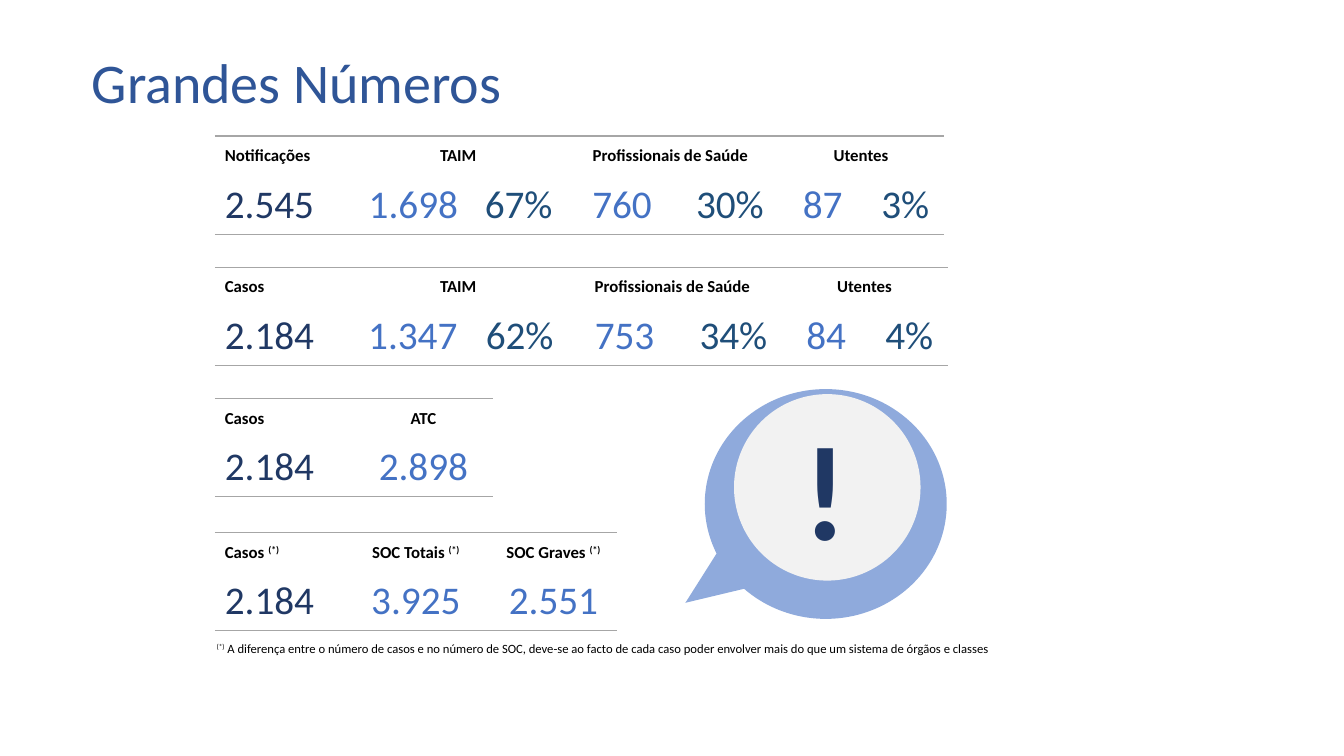
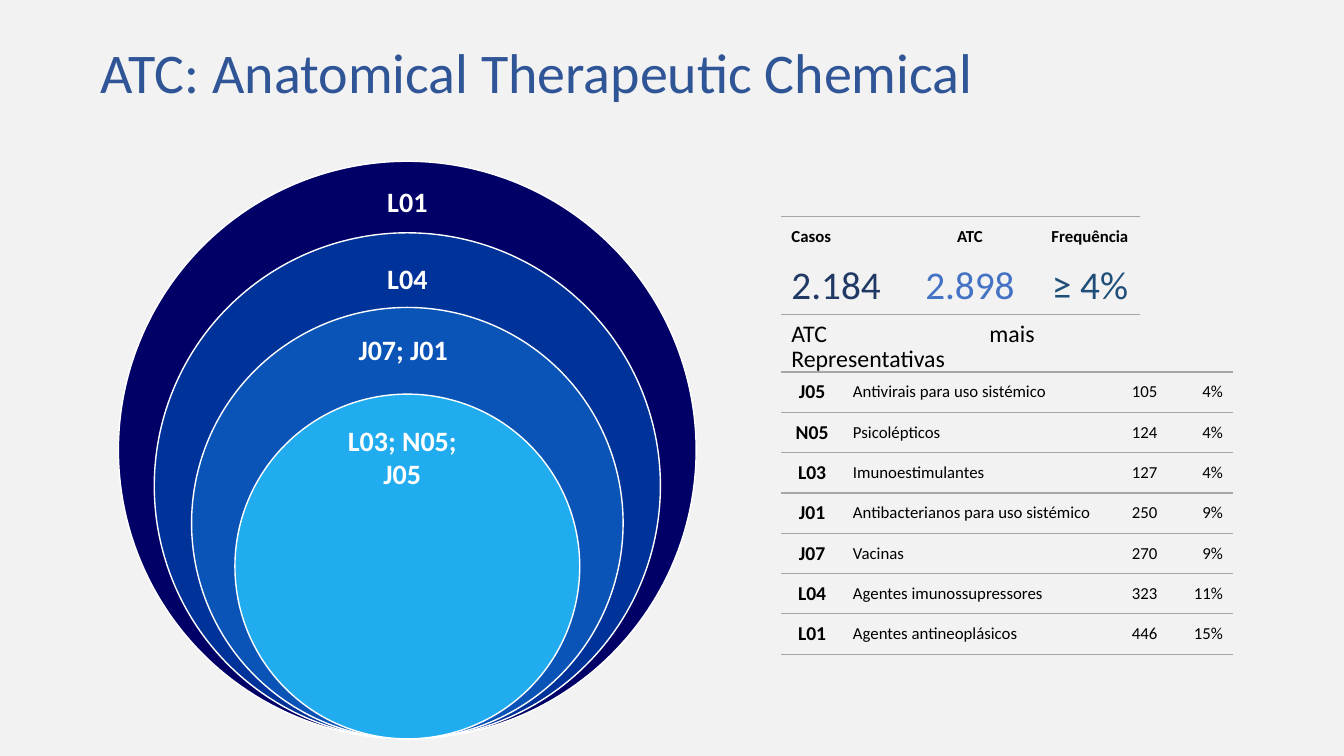
from dataclasses import dataclass

from lxml.etree import SubElement
from pptx import Presentation
from pptx.dml.color import RGBColor
from pptx.enum.shapes import MSO_SHAPE as Shape
from pptx.enum.text import MSO_ANCHOR as Anchor, MSO_AUTO_SIZE as AutoSize, PP_ALIGN as Align
from pptx.oxml import parse_xml
from pptx.oxml.ns import nsdecls, qn
from pptx.util import Inches, Pt


@dataclass(frozen=True)
class Theme:
    font: str = "Calibri"
    title: str = "2F5597"
    text: str = "000000"
    total: str = "203864"
    count: str = "4472C4"
    share: str = "1F4E79"
    rule: str = "A6A6A6"
    white: str = "FFFFFF"
    pale: str = "F2F2F2"
    bubble: str = "8FAADC"
    rings: tuple = ("000066", "003399", "0A54B7", "20ACEE")
    title_size: int = 40
    figure_size: int = 28
    ring_size: int = 20
    caption_size: int = 17
    code_size: int = 14
    table_size: int = 12
    note_size: int = 9
    symbol_size: int = 96


THEME = Theme()
MARK = "(*)"
PLAIN_TABLE = "{2D5ABB26-0587-4C30-8999-92F81FD0307C}"
SIDES = {"top": "a:lnT", "bottom": "a:lnB"}


def rgb(color):
    return RGBColor.from_string(color)


def write(para, text, size, color=THEME.text, bold=False, align=Align.LEFT):
    para.alignment = align
    for part in text.partition(MARK):
        if not part:
            continue
        span = para.add_run()
        span.text = part
        span.font.name = THEME.font
        span.font.size = Pt(size)
        span.font.bold = bold
        span.font.color.rgb = rgb(color)
        if part == MARK:
            span._r.get_or_add_rPr().set("baseline", "30000")


def add_page(deck, title, left, top, background):
    page = deck.slides.add_slide(deck.slide_layouts[5])
    page.background.fill.solid()
    page.background.fill.fore_color.rgb = rgb(background)
    box = page.shapes.title
    box.left, box.top, box.width, box.height = (Inches(n) for n in (left, top, 11, 0.69))
    frame = box.text_frame
    frame.auto_size = AutoSize.NONE
    frame.vertical_anchor = Anchor.TOP
    frame.margin_left = frame.margin_right = frame.margin_top = frame.margin_bottom = 0
    frame.paragraphs[0].line_spacing = 0.9
    write(frame.paragraphs[0], title, THEME.title_size, THEME.title)
    return page


def add_text(page, area, lines, size, color=THEME.text, bold=False,
             align=Align.LEFT, anchor=Anchor.TOP, spacing=None):
    frame = page.shapes.add_textbox(*(Inches(n) for n in area)).text_frame
    frame.word_wrap = True
    frame.vertical_anchor = anchor
    for index, line in enumerate(lines):
        para = frame.add_paragraph() if index else frame.paragraphs[0]
        para.line_spacing = spacing
        write(para, line, size, color, bold, align)


def add_figure(page, kind, area, fill, outline=None):
    figure = page.shapes.add_shape(kind, *(Inches(n) for n in area))
    figure.shadow.inherit = False
    figure.fill.solid()
    figure.fill.fore_color.rgb = rgb(fill)
    if outline:
        figure.line.color.rgb = rgb(outline)
        figure.line.width = Pt(1)
    else:
        figure.line.fill.background()
    return figure


def rule_cell(cell, sides):
    properties = cell._tc.get_or_add_tcPr()
    for position, side in enumerate(sides):
        line = parse_xml(f'<{SIDES[side]} {nsdecls("a")} w="{Pt(1)}"/>')
        solid = SubElement(line, qn("a:solidFill"))
        SubElement(solid, qn("a:srgbClr"), val=THEME.rule)
        properties.insert(position, line)


def add_plain_table(page, left, top, widths, heights, row_sides):
    frame = page.shapes.add_table(len(heights), len(widths), Inches(left), Inches(top),
                                  Inches(sum(widths)), Inches(sum(heights)))
    table = frame.table
    table.first_row = table.horz_banding = False
    table._tbl.tblPr.find(qn("a:tableStyleId")).text = PLAIN_TABLE
    for column, width in zip(table.columns, widths):
        column.width = Inches(width)
    for row, height, sides in zip(table.rows, heights, row_sides):
        row.height = Inches(height)
        for cell in row.cells:
            cell.fill.background()
            rule_cell(cell, sides)
    return table


def add_summary(page, left, top, widths, headers, values, right_columns=()):
    table = add_plain_table(page, left, top, widths, (0.4, 0.57), (("top",), ("bottom",)))
    column = 0
    for text, columns in headers:
        cell = table.cell(0, column)
        if columns > 1:
            cell.merge(table.cell(0, column + columns - 1))
        cell.vertical_anchor = Anchor.MIDDLE
        write(cell.text_frame.paragraphs[0], text, THEME.table_size, bold=True,
              align=Align.CENTER if column else Align.LEFT)
        column += columns
    for column, value in enumerate(values):
        align, color = Align.CENTER, THEME.count
        if column == 0:
            align, color = Align.LEFT, THEME.total
        elif value.endswith("%"):
            color = THEME.share
        if column in right_columns:
            align = Align.RIGHT
        write(table.cell(1, column).text_frame.paragraphs[0], value,
              THEME.figure_size, color, align=align)


def add_code_list(page, left, top, widths, records):
    table = add_plain_table(page, left, top, widths, [0.4] * len(records),
                            [("top", "bottom")] * len(records))
    aligns = (Align.CENTER, Align.LEFT, Align.RIGHT, Align.RIGHT)
    for row, record in enumerate(records):
        for column, (text, align) in enumerate(zip(record, aligns)):
            cell = table.cell(row, column)
            cell.vertical_anchor = Anchor.MIDDLE
            is_code = column == 0
            write(cell.text_frame.paragraphs[0], text,
                  THEME.code_size if is_code else THEME.table_size, bold=is_code, align=align)


def add_nested_circles(page, center, bottom, diameters):
    for diameter, color in zip(diameters, THEME.rings):
        area = (center - diameter / 2, bottom - diameter, diameter, diameter)
        add_figure(page, Shape.OVAL, area, color, THEME.white)


def add_alert_bubble(page):
    bubble = add_figure(page, Shape.OVAL_CALLOUT, (6.99, 3.86, 2.4, 2.28), THEME.bubble)
    bubble.adjustments[0], bubble.adjustments[1] = -0.58, 0.43
    add_figure(page, Shape.OVAL, (7.28, 3.91, 1.85, 1.85), THEME.pale)
    add_text(page, (7.73, 3.98, 0.92, 1.72), ["!"], THEME.symbol_size, THEME.total,
             bold=True, align=Align.CENTER)


def build_numbers(deck):
    page = add_page(deck, "Grandes Números", 0.91, 0.55, THEME.white)
    left = 2.13
    sources = [("TAIM", 2), ("Profissionais de Saúde", 2), ("Utentes", 2)]
    add_summary(page, left, 1.35, (1.38, 1.18, 0.89, 1.18, 0.96, 0.88, 0.76),
                [("Notificações", 1)] + sources,
                ("2.545", "1.698", "67%", "760", "30%", "87", "3%"), (2,))
    add_summary(page, left, 2.65, (1.37, 1.19, 0.9, 1.21, 0.95, 0.89, 0.76),
                [("Casos", 1)] + sources,
                ("2.184", "1.347", "62%", "753", "34%", "84", "4%"), (2,))
    add_summary(page, left, 3.95, (1.38, 1.38), [("Casos", 1), ("ATC", 1)],
                ("2.184", "2.898"))
    add_summary(page, left, 5.28, (1.26, 1.47, 1.26),
                [("Casos (*)", 1), ("SOC Totais (*)", 1), ("SOC Graves (*)", 1)],
                ("2.184", "3.925", "2.551"))
    add_alert_bubble(page)
    note = ("(*) A diferença entre o número de casos e no número de SOC, deve-se ao facto "
            "de cada caso poder envolver mais do que um sistema de órgãos e classes")
    add_text(page, (2.05, 6.31, 8.08, 0.25), [note], THEME.note_size)


def build_classes(deck):
    page = add_page(deck, "ATC: Anatomical Therapeutic Chemical", 1, 0.45, THEME.pale)
    add_nested_circles(page, 4.04, 7.33, (5.73, 5.02, 4.28, 3.42))
    labels = [
        (3.3, 1.78, ["L01"]),
        (3.3, 2.55, ["L04"]),
        (3.26, 3.25, ["J07; J01"]),
        (3.25, 4.15, ["L03; N05;", "J05"]),
    ]
    for left, top, lines in labels:
        add_text(page, (left, top, 1.48, 0.44), lines, THEME.ring_size, THEME.white,
                 bold=True, align=Align.CENTER)
    left = 7.75
    add_summary(page, left, 2.15, (1.18, 1.38, 1),
                [("Casos", 1), ("ATC", 1), ("Frequência", 1)], ("2.184", "2.898", "≥ 4%"))
    add_text(page, (left, 3.24, 2.61, 0.41), ["ATC mais Representativas"],
             THEME.caption_size, align=Align.JUSTIFY, anchor=Anchor.MIDDLE, spacing=0.9)
    add_code_list(page, left, 3.69, (0.61, 2.6, 0.62, 0.65), [
        ("J05", "Antivirais para uso sistémico", "105", "4%"),
        ("N05", "Psicolépticos", "124", "4%"),
        ("L03", "Imunoestimulantes", "127", "4%"),
        ("J01", "Antibacterianos para uso sistémico", "250", "9%"),
        ("J07", "Vacinas", "270", "9%"),
        ("L04", "Agentes imunossupressores", "323", "11%"),
        ("L01", "Agentes antineoplásicos", "446", "15%"),
    ])


def main():
    deck = Presentation()
    deck.slide_width, deck.slide_height = Inches(13.33), Inches(7.5)
    build_numbers(deck)
    build_classes(deck)
    deck.save("out.pptx")


if __name__ == "__main__":
    main()
